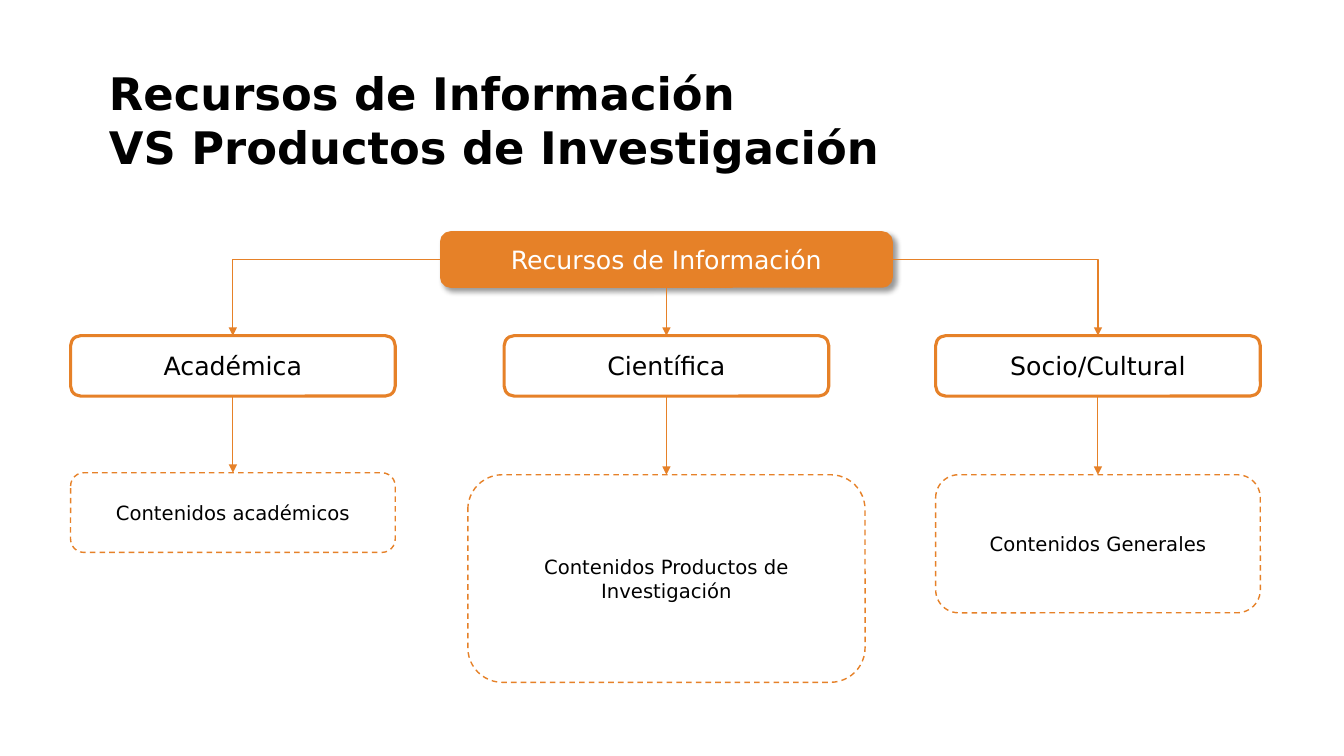
"""Build the slide that sorts information resources into three branches."""
from lxml.etree import SubElement
from pptx import Presentation
from pptx.dml.color import RGBColor
from pptx.enum.dml import MSO_LINE
from pptx.enum.shapes import MSO_CONNECTOR, MSO_SHAPE
from pptx.enum.text import MSO_ANCHOR, MSO_AUTO_SIZE, PP_ALIGN
from pptx.oxml.ns import qn
from pptx.util import Inches, Pt

TITLE = ["Recursos de Información", "VS Productos de Investigación"]
ROOT = "Recursos de Información"
BRANCHES = [
    dict(name="Académica", content="Contenidos académicos",
         center=2.31, top=4.69, width=3.22, height=0.79, side=1),
    dict(name="Científica", content="Contenidos Productos de Investigación",
         center=6.61, top=4.71, width=3.94, height=2.06, side=2),
    dict(name="Socio/Cultural", content="Contenidos Generales",
         center=10.89, top=4.71, width=3.22, height=1.37, side=3),
]
ROOT_CENTER, ROOT_TOP, ROOT_WIDTH, ROOT_HEIGHT = 6.61, 2.31, 4.46, 0.53
BRANCH_TOP, BRANCH_WIDTH, BRANCH_HEIGHT = 3.33, 3.22, 0.6
TOP, BOTTOM = 0, 2

FONT = "DejaVu Sans"
ORANGE = RGBColor(0xE6, 0x81, 0x28)
WHITE = RGBColor(0xFF, 0xFF, 0xFF)
BLACK = RGBColor(0, 0, 0)


def write(frame, lines, size, color=BLACK, bold=False, align=PP_ALIGN.CENTER,
          anchor=MSO_ANCHOR.MIDDLE):
    """Fill a text frame with one paragraph per line."""
    frame.word_wrap = True
    frame.auto_size = MSO_AUTO_SIZE.NONE
    frame.vertical_anchor = anchor
    for index, line in enumerate(lines):
        para = frame.add_paragraph() if index else frame.paragraphs[0]
        para.alignment = align
        para.space_before = Pt(0)
        span = para.add_run()
        span.text = line
        span.font.name, span.font.size = FONT, Pt(size)
        span.font.bold, span.font.color.rgb = bold, color


def add_box(page, text, center, top, width, height, size=18, fill=WHITE,
            color=BLACK, weight=2.25, dash=None):
    """Add a rounded box centred on a column."""
    box = page.shapes.add_shape(
        MSO_SHAPE.ROUNDED_RECTANGLE, Inches(center - width / 2), Inches(top),
        Inches(width), Inches(height))
    box.fill.solid()
    box.fill.fore_color.rgb = fill
    box.line.color.rgb = ORANGE
    box.line.width = Pt(weight)
    if dash:
        box.line.dash_style = dash
    box.shadow.inherit = False
    write(box.text_frame, [text], size, color)
    return box


def add_shadow(box):
    """Drop a soft shadow to the lower right of a box."""
    effects = box.element.spPr.find(qn("a:effectLst"))
    shadow = SubElement(effects, qn("a:outerShdw"), blurRad=str(Pt(4)),
                        dist=str(Pt(3)), dir=str(45 * 60000), rotWithShape="0")
    tint = SubElement(shadow, qn("a:srgbClr"), val="000000")
    SubElement(tint, qn("a:alpha"), val="40000")


def join(page, source, side, target):
    """Draw an arrow from one side of a box to the top of another."""
    straight = side == BOTTOM
    kind = MSO_CONNECTOR.STRAIGHT if straight else MSO_CONNECTOR.ELBOW
    arrow = page.shapes.add_connector(kind, 0, 0, 0, 0)
    arrow.begin_connect(source, side)
    arrow.end_connect(target, TOP)
    arrow.line.color.rgb = ORANGE
    arrow.line.width = Pt(0.75)
    properties = arrow.element.spPr
    if not straight:
        properties.find(qn("a:prstGeom")).set("prst", "bentConnector2")
    SubElement(properties.find(qn("a:ln")), qn("a:tailEnd"), type="triangle")
    SubElement(properties, qn("a:effectLst"))


def main():
    """Lay out the title, the boxes and the arrows, then save."""
    deck = Presentation()
    deck.slide_width, deck.slide_height = Inches(13.33), Inches(7.5)
    page = deck.slides.add_slide(deck.slide_layouts[5])

    title = page.shapes.title
    title.left, title.top = Inches(0.98), Inches(0.6)
    title.width, title.height = Inches(10.41), Inches(0.64)
    write(title.text_frame, TITLE, 32, bold=True, align=PP_ALIGN.LEFT,
          anchor=MSO_ANCHOR.TOP)

    root = add_box(page, ROOT, ROOT_CENTER, ROOT_TOP, ROOT_WIDTH, ROOT_HEIGHT,
                   fill=ORANGE, color=WHITE)
    add_shadow(root)
    for branch in BRANCHES:
        center = branch["center"]
        heading = add_box(page, branch["name"], center, BRANCH_TOP,
                          BRANCH_WIDTH, BRANCH_HEIGHT)
        content = add_box(page, branch["content"], center, branch["top"],
                          branch["width"], branch["height"], size=14,
                          weight=1, dash=MSO_LINE.DASH)
        join(page, root, branch["side"], heading)
        join(page, heading, BOTTOM, content)

    deck.save("out.pptx")


if __name__ == "__main__":
    main()
